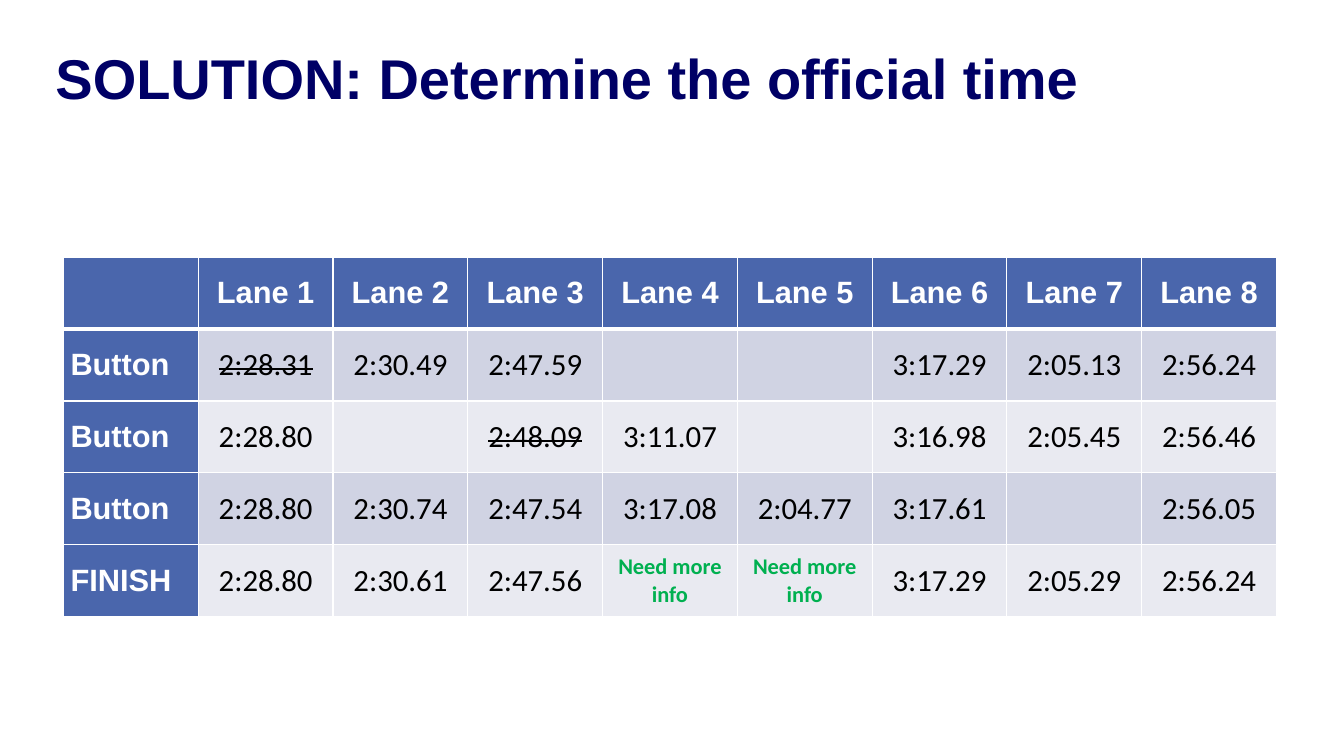
import pptx
import pptx.dml.color
import pptx.enum.text
import pptx.oxml.ns
import pptx.util
from lxml import etree

TITLE = "SOLUTION: Determine the official time"
HEADER = [""] + [f"Lane {lane}" for lane in range(1, 9)]
MORE = "Need more info"
TIMES = [
    ["Button", "2:28.31", "2:30.49", "2:47.59", "", "", "3:17.29", "2:05.13", "2:56.24"],
    ["Button", "2:28.80", "", "2:48.09", "3:11.07", "", "3:16.98", "2:05.45", "2:56.46"],
    ["Button", "2:28.80", "2:30.74", "2:47.54", "3:17.08", "2:04.77", "3:17.61", "", "2:56.05"],
    ["FINISH", "2:28.80", "2:30.61", "2:47.56", MORE, MORE, "3:17.29", "2:05.29", "2:56.24"],
]
STRUCK = {"2:28.31", "2:48.09"}
COLORS = {
    "title": "000066", "head": "4A66AC", "dark_band": "D0D3E3", "light_band": "E9EAF1",
    "white": "FFFFFF", "time": "000000", "more": "00B050",
}
TABLE_LEFT, TABLE_TOP, TABLE_WIDTH, TABLE_HEIGHT = 0.63, 2.55, 12.03, 3.57
Inches = pptx.util.Inches
ALIGN = pptx.enum.text.PP_ALIGN
MIDDLE = pptx.enum.text.MSO_ANCHOR.MIDDLE


def color(name):
    return pptx.dml.color.RGBColor.from_string(COLORS[name])


def style(span, font, size, name, bold):
    span.font.name = font
    span.font.size = pptx.util.Pt(size)
    span.font.color.rgb = color(name)
    span.font.bold = bold


def add_borders(cell, row):
    properties = cell._tc.get_or_add_tcPr()
    widths = {"lnL": 1, "lnR": 1, "lnT": 3 if row == 1 else 1, "lnB": 3 if row == 0 else 1}
    for side, points in widths.items():
        line = etree.SubElement(properties, pptx.oxml.ns.qn(f"a:{side}"), w=str(pptx.util.Pt(points)))
        fill = etree.SubElement(line, pptx.oxml.ns.qn("a:solidFill"))
        etree.SubElement(fill, pptx.oxml.ns.qn("a:srgbClr"), val=COLORS["white"])


def fill_cell(cell, text, row, column):
    heading = row == 0 or column == 0
    add_borders(cell, row)
    cell.fill.solid()
    cell.fill.fore_color.rgb = color("head" if heading else "dark_band" if row % 2 else "light_band")
    cell.vertical_anchor = MIDDLE
    cell.margin_left = cell.margin_right = Inches(0.07)
    cell.margin_top = cell.margin_bottom = 0
    if not text:
        return
    cell.text_frame.text = text
    para = cell.text_frame.paragraphs[0]
    para.alignment = ALIGN.LEFT if column == 0 else ALIGN.CENTER
    span = para.runs[0]
    if heading:
        style(span, "Arial", 22, "white", True)
    elif text == MORE:
        style(span, "Calibri", 16, "more", True)
    else:
        style(span, "Calibri", 22, "time", False)
    if text in STRUCK:
        span.font._element.set("strike", "sngStrike")


def add_title(page):
    box = page.shapes.title
    box.left, box.top, box.width, box.height = (Inches(n) for n in (0.45, 0.39, 12.2, 0.83))
    frame = box.text_frame
    frame.text = TITLE
    frame.word_wrap = True
    frame.auto_size = pptx.enum.text.MSO_AUTO_SIZE.NONE
    frame.vertical_anchor = MIDDLE
    frame.margin_left = frame.margin_right = frame.margin_top = frame.margin_bottom = Inches(0.1)
    para = frame.paragraphs[0]
    para.alignment = ALIGN.LEFT
    para.line_spacing = 0.9
    style(para.runs[0], "Arial", 40, "title", True)


def add_times(page):
    rows = [HEADER] + TIMES
    area = (Inches(n) for n in (TABLE_LEFT, TABLE_TOP, TABLE_WIDTH, TABLE_HEIGHT))
    table = page.shapes.add_table(len(rows), len(HEADER), *area).table
    for row, texts in enumerate(rows):
        for column, text in enumerate(texts):
            fill_cell(table.cell(row, column), text, row, column)


def main():
    deck = pptx.Presentation()
    deck.slide_width, deck.slide_height = Inches(13.33), Inches(7.5)
    page = deck.slides.add_slide(deck.slide_layouts[5])
    add_title(page)
    add_times(page)
    deck.save("out.pptx")


if __name__ == "__main__":
    main()
